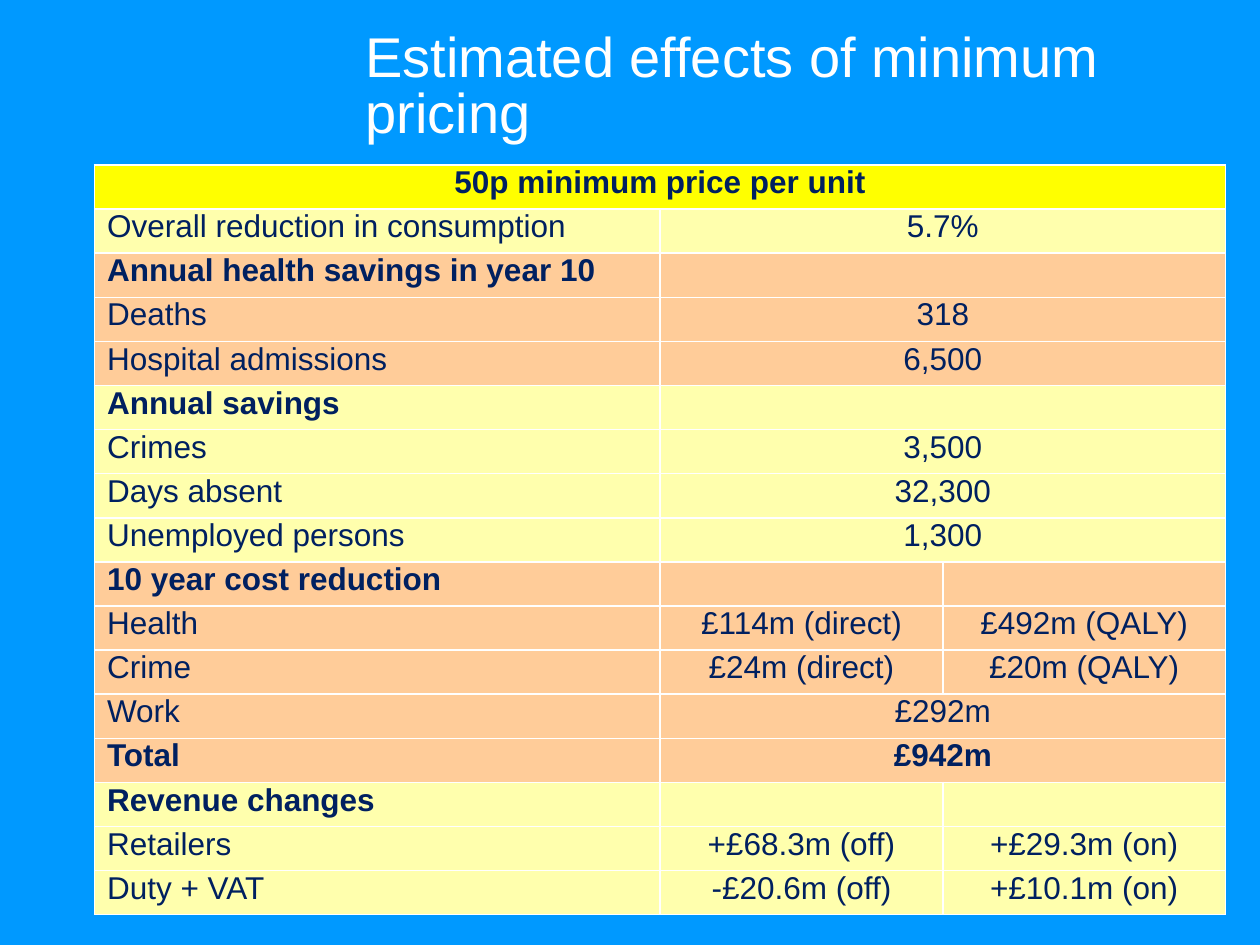
import pptx
import pptx.dml.color
import pptx.enum.text
import pptx.util

Pt = pptx.util.Pt
ALIGN = pptx.enum.text.PP_ALIGN
ANCHOR = pptx.enum.text.MSO_ANCHOR

YELLOW, CREAM, PEACH = "FFFF00", "FFFFAD", "FFCC99"
SECTIONS = [
    (YELLOW, [["50p minimum price per unit"]]),
    (CREAM, [["Overall reduction in consumption", "5.7%"]]),
    (PEACH, [
        ["Annual health savings in year 10", ""],
        ["Deaths", "318"],
        ["Hospital admissions", "6,500"],
    ]),
    (CREAM, [
        ["Annual savings", ""],
        ["Crimes", "3,500"],
        ["Days absent", "32,300"],
        ["Unemployed persons", "1,300"],
    ]),
    (PEACH, [
        ["10 year cost reduction", "", ""],
        ["Health", "£114m (direct)", "£492m (QALY)"],
        ["Crime", "£24m (direct)", "£20m (QALY)"],
        ["Work", "£292m"],
        ["Total", "£942m"],
    ]),
    (CREAM, [
        ["Revenue changes", "", ""],
        ["Retailers", "+£68.3m (off)", "+£29.3m (on)"],
        ["Duty + VAT", "-£20.6m (off)", "+£10.1m (on)"],
    ]),
]


def colour(value):
    """Turn a hex string into a colour."""
    return pptx.dml.color.RGBColor.from_string(value)


def format_text(para, size, shade, bold, align):
    """Format a paragraph and its runs."""
    para.alignment = align
    for span in para.runs:
        span.font.name = "Arial"
        span.font.size = Pt(size)
        span.font.bold = bold
        span.font.color.rgb = colour(shade)


def place_title(page, left, top, width, height):
    """Place the title in the given box."""
    title = page.shapes.title
    title.left, title.top = Pt(left), Pt(top)
    title.width, title.height = Pt(width), Pt(height)
    frame = title.text_frame
    frame.text = "Estimated effects of minimum pricing"
    frame.word_wrap = True
    frame.auto_size = pptx.enum.text.MSO_AUTO_SIZE.NONE
    frame.vertical_anchor = ANCHOR.TOP
    para = frame.paragraphs[0]
    para.line_spacing = 0.83
    format_text(para, 32, "FFFFFF", False, ALIGN.LEFT)


def place_table(page, left, top, width, height):
    """Place the table of effects in the given box."""
    rows = [(fill, texts) for fill, group in SECTIONS for texts in group]
    frame = page.shapes.add_table(
        len(rows), 3, Pt(left), Pt(top), Pt(width), Pt(height))
    table = frame.table
    table.first_row = table.horz_banding = False
    for column, share in zip(table.columns, (0.5, 0.25, 0.25)):
        column.width = Pt(width * share)
    for index, (fill, texts) in enumerate(rows):
        table.rows[index].height = Pt(height / len(rows))
        heading = len(texts) == 1 or texts[1] == "" or texts[0] == "Total"
        for number in range(3):
            cell = table.cell(index, number)
            cell.fill.solid()
            cell.fill.fore_color.rgb = colour(fill)
            cell.margin_left = cell.margin_right = Pt(7.2)
            cell.margin_top = cell.margin_bottom = Pt(0)
            if number < len(texts) and texts[number]:
                cell.text_frame.text = texts[number]
                label = number == 0 and len(texts) > 1
                format_text(cell.text_frame.paragraphs[0], 18, "002060",
                            heading, ALIGN.LEFT if label else ALIGN.CENTER)
        if len(texts) < 3:
            table.cell(index, len(texts) - 1).merge(table.cell(index, 2))


def main():
    """Build the slide and save it."""
    deck = pptx.Presentation()
    deck.slide_width, deck.slide_height = Pt(720), Pt(540)
    page = deck.slides.add_slide(deck.slide_layouts.get_by_name("Title Only"))
    page.background.fill.solid()
    page.background.fill.fore_color.rgb = colour("0099FF")
    place_title(page, 201.6, 15.1, 487.4, 59.8)
    place_table(page, 54, 94.3, 646.4, 428.4)
    deck.save("out.pptx")


if __name__ == "__main__":
    main()
